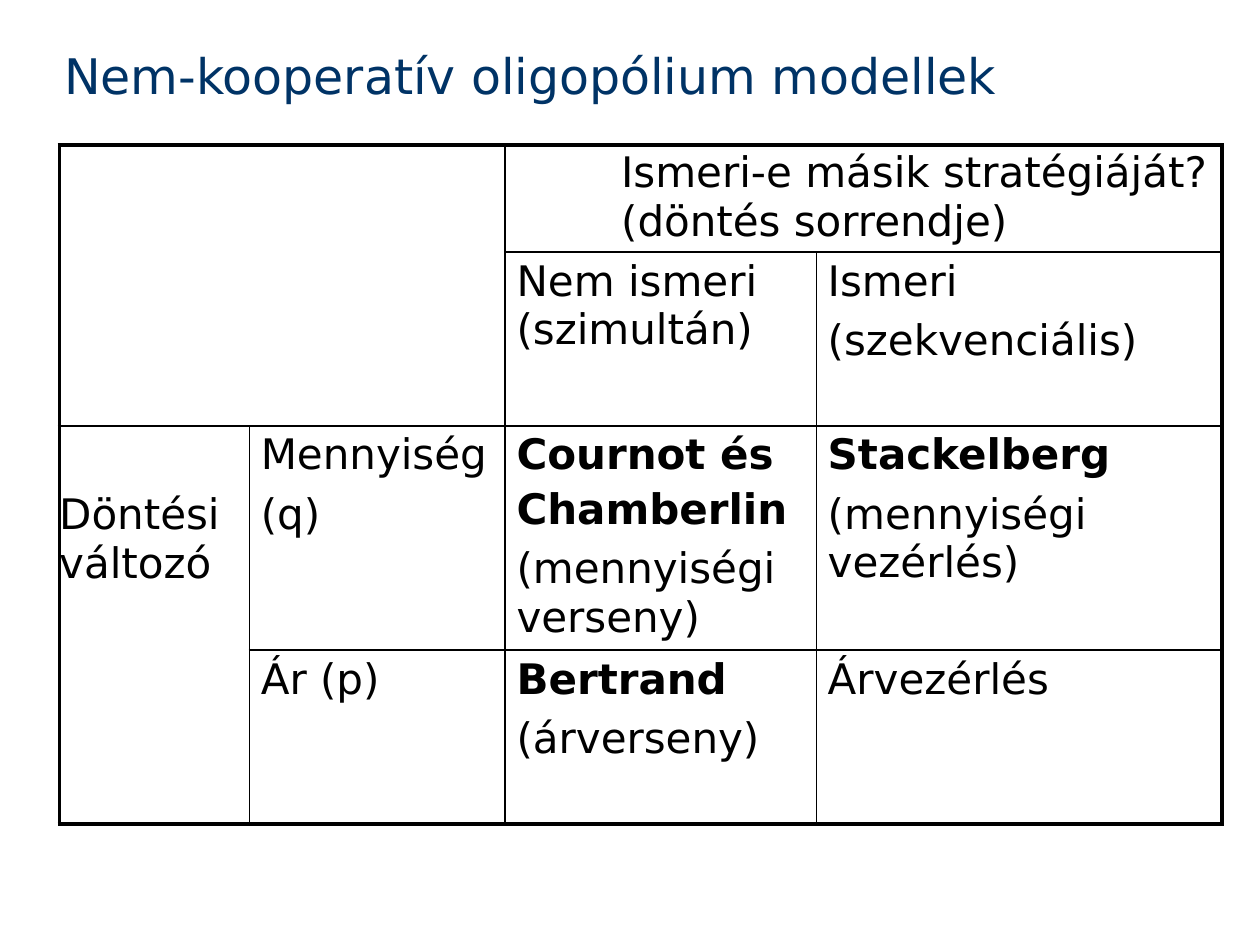
import lxml.etree
import pptx
import pptx.dml.color
import pptx.oxml.ns
import pptx.util

Inches = pptx.util.Inches
Pt = pptx.util.Pt
Color = pptx.dml.color.RGBColor.from_string
qn = pptx.oxml.ns.qn

theme = {
    "font": "DejaVu Sans",
    "title": {"size": Pt(28), "color": "003366"},
    "body": {"size": Pt(24), "color": "000000"},
    "line": "000000",
    "thin": Pt(1),
    "thick": Pt(2.25),
}


def write(para, text, style, bold=False):
    run = para.add_run()
    run.text = text
    look = {"name": theme["font"], "size": style["size"], "bold": bold}
    for key, value in look.items():
        setattr(run.font, key, value)
    run.font.color.rgb = Color(style["color"])


def edge(cell, sides):
    props = cell._tc.get_or_add_tcPr()
    for spot, (side, width) in enumerate(sides.items()):
        line = lxml.etree.Element(qn("a:ln" + side), w=str(int(width)))
        fill = lxml.etree.SubElement(line, qn("a:solidFill"))
        lxml.etree.SubElement(fill, qn("a:srgbClr"), val=theme["line"])
        props.insert(spot, line)


deck = pptx.Presentation()
deck.slide_width = Inches(10)
deck.slide_height = Inches(7.5)
slide = deck.slides.add_slide(deck.slide_layouts[6])

title = slide.shapes.add_textbox(Inches(0.5), Inches(0.36), Inches(8.45), Inches(0.47))
frame = title.text_frame
flat = {"word_wrap": True, "margin_left": Inches(0.01), "margin_top": 0,
        "margin_right": 0, "margin_bottom": 0}
for key, value in flat.items():
    setattr(frame, key, value)
write(frame.paragraphs[0], "Nem-kooperatív oligopólium modellek", theme["title"])

wide = [1.51, 2.03, 2.47, 3.22]
high = [0.85, 1.38, 1.78, 1.38]
grid = slide.shapes.add_table(
    len(high), len(wide), Inches(0.47), Inches(1.15),
    Inches(sum(wide)), Inches(sum(high))).table
grid.first_row = False
grid.horz_banding = False
for column, size in zip(grid.columns, wide):
    column.width = Inches(size)
for row, size in zip(grid.rows, high):
    row.height = Inches(size)

spans = {(0, 0): (1, 1), (0, 2): (0, 3), (2, 0): (3, 0)}
for start, end in spans.items():
    grid.cell(*start).merge(grid.cell(*end))

texts = {
    (0, 2): [("Ismeri-e másik stratégiáját? (döntés sorrendje)", False, 0)],
    (1, 2): [("Nem ismeri (szimultán)", False, 0)],
    (1, 3): [("Ismeri", False, 0), ("(szekvenciális)", False, 5.8)],
    (2, 0): [("Döntési változó", False, 0)],
    (2, 1): [("Mennyiség", False, 0), ("(q)", False, 5.8)],
    (2, 2): [("Cournot és", True, 0), ("Chamberlin", True, 3),
             ("(mennyiségi verseny)", False, 5.8)],
    (2, 3): [("Stackelberg", True, 0), ("(mennyiségi vezérlés)", False, 5.8)],
    (3, 1): [("Ár (p)", False, 0)],
    (3, 2): [("Bertrand", True, 0), ("(árverseny)", False, 5.8)],
    (3, 3): [("Árvezérlés", False, 0)],
}
insets = {(0, 2): (0.92, 0.03), (2, 0): (0, 0.51)}

for r in range(len(high)):
    for c in range(len(wide)):
        cell = grid.cell(r, c)
        left, top = insets.get((r, c), (0.09, 0.04))
        pads = {"margin_left": Inches(left), "margin_top": Inches(top),
                "margin_right": 0, "margin_bottom": 0}
        for key, value in pads.items():
            setattr(cell, key, value)
        cell.fill.background()
        low, far = spans.get((r, c), (r, c))
        outer = {"L": c == 0, "R": far == len(wide) - 1,
                 "T": r == 0, "B": low == len(high) - 1}
        if not cell.is_spanned:
            edge(cell, {side: theme["thick" if out else "thin"]
                        for side, out in outer.items()})
        for n, (text, bold, gap) in enumerate(texts.get((r, c), [])):
            body = cell.text_frame
            para = body.add_paragraph() if n else body.paragraphs[0]
            if gap:
                para.space_before = Pt(gap)
            write(para, text, theme["body"], bold)

deck.save("out.pptx")
